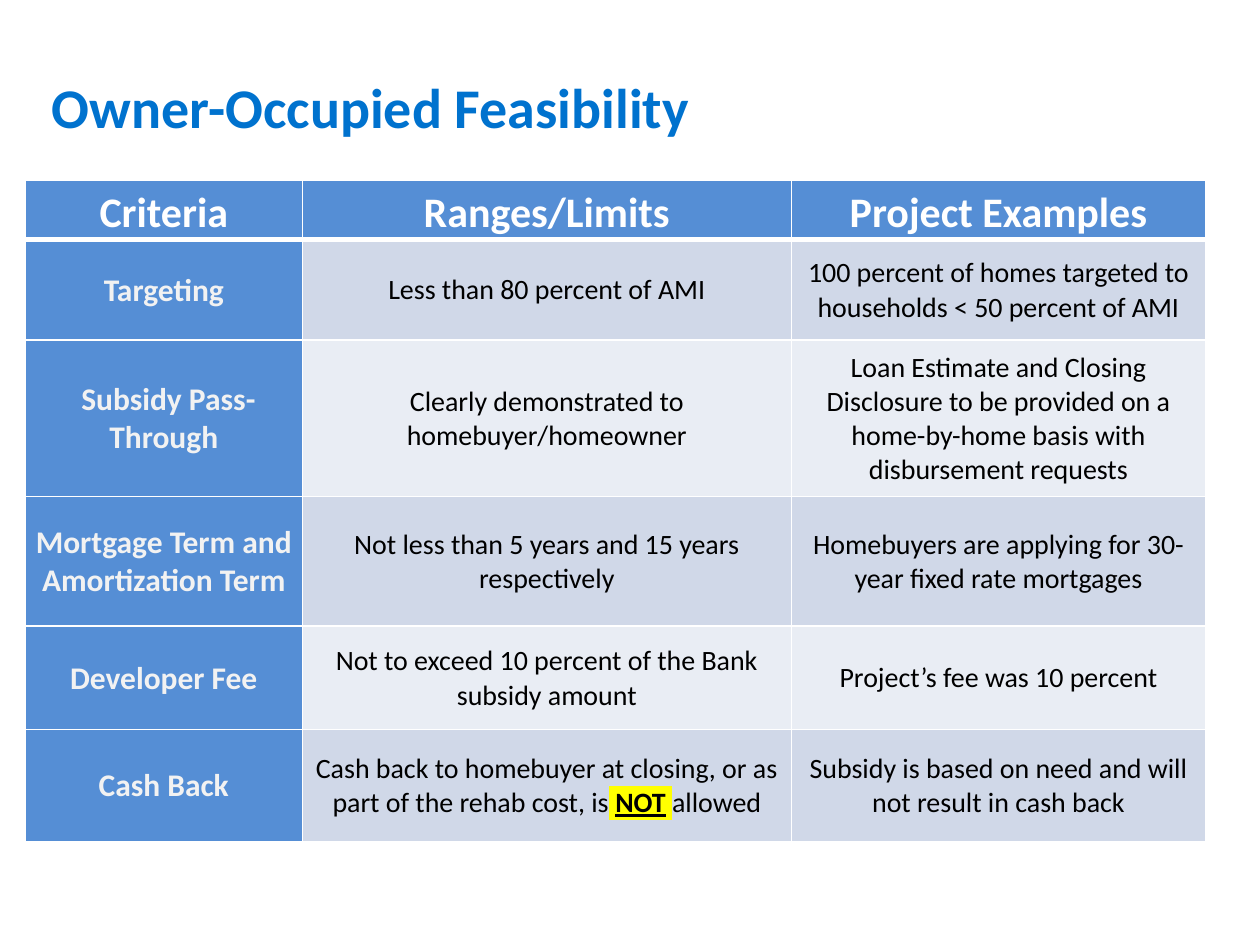
import pptx
import pptx.dml.color
import pptx.enum.text
import pptx.oxml
import pptx.oxml.ns
import pptx.util
from lxml import etree

RGB = pptx.dml.color.RGBColor
Inches = pptx.util.Inches
Pt = pptx.util.Pt
ALIGN = pptx.enum.text.PP_ALIGN
ANCHOR = pptx.enum.text.MSO_ANCHOR

WHITE = RGB(0xFF, 0xFF, 0xFF)
BLACK = RGB(0, 0, 0)
AZURE = RGB(0x00, 0x72, 0xCE)
BLUE = RGB(0x55, 0x8E, 0xD5)
PALE = RGB(0xF2, 0xF2, 0xF2)
BANDS = [RGB(0xD0, 0xD8, 0xE8), RGB(0xE9, 0xED, 0xF4)]
YELLOW = RGB(0xFF, 0xFF, 0x00)

WIDE, HIGH = 10, 7.5
COLS = [2.2, 3.88, 3.29]
ROWS = [0.47, 0.8, 1.24, 1.03, 0.82, 0.89]

TITLE = {"name": "Calibri", "size": Pt(32), "bold": True, "color": AZURE}
HEAD = {"name": "Calibri", "size": Pt(24), "bold": True, "color": WHITE}
LABEL = {**HEAD, "size": Pt(18), "color": PALE}
BODY = {"name": "Calibri", "size": Pt(16), "bold": False, "color": BLACK}
MARK = {**BODY, "mark": YELLOW}
STRONG = {**MARK, "bold": True, "underline": True}

CASH = [
    ("Cash back to homebuyer at closing, or as part of the rehab cost, is", BODY),
    (" ", MARK),
    ("NOT", STRONG),
    (" ", MARK),
    ("allowed", BODY),
]
DATA = [
    ["Criteria", "Ranges/Limits", "Project Examples"],
    ["Targeting", "Less than 80 percent of AMI",
     "100 percent of homes targeted to households < 50 percent of AMI"],
    [" Subsidy Pass-Through", "Clearly demonstrated to homebuyer/homeowner",
     "Loan Estimate and Closing Disclosure to be provided on a home-by-home "
     "basis with disbursement requests"],
    ["Mortgage Term and Amortization Term",
     "Not less than 5 years and 15 years respectively",
     "Homebuyers are applying for 30-year fixed rate mortgages"],
    ["Developer Fee", "Not to exceed 10 percent of the Bank subsidy amount",
     "Project’s fee was 10 percent"],
    ["Cash Back", CASH,
     "Subsidy is based on need and will not result in cash back"],
]


def node(owner, tag, **attrs):
    return etree.SubElement(owner, pptx.oxml.ns.qn(tag), attrs)


def add_run(para, text, form):
    run = para.add_run()
    run.text = text
    for key, value in form.items():
        if key == "color":
            run.font.color.rgb = value
        elif key != "mark":
            setattr(run.font, key, value)
    if "mark" in form:
        props = run.font._element
        mark = node(props, "a:highlight")
        node(mark, "a:srgbClr", val=str(form["mark"]))
        props.find(pptx.oxml.ns.qn("a:solidFill")).addnext(mark)


def add_edges(cell, base):
    props = cell._tc.get_or_add_tcPr()
    sides = {"a:lnL": 1, "a:lnR": 1, "a:lnT": 1, "a:lnB": base}
    for spot, (tag, size) in enumerate(sides.items()):
        line = node(props, tag, w=str(Pt(size)))
        node(node(line, "a:solidFill"), "a:srgbClr", val=str(WHITE))
        props.insert(spot, line)


def add_title(slide, text):
    title = slide.shapes.title
    place = {"left": 0.031 * WIDE, "top": 0.11 * HIGH,
             "width": 0.819 * WIDE, "height": 0.067 * HIGH}
    for key, value in place.items():
        setattr(title, key, Inches(value))
    frame = title.text_frame
    form = {"auto_size": pptx.enum.text.MSO_AUTO_SIZE.NONE, "word_wrap": True,
            "vertical_anchor": ANCHOR.BOTTOM, "margin_top": 0,
            "margin_bottom": Inches(0.22)}
    for key, value in form.items():
        setattr(frame, key, value)
    para = frame.paragraphs[0]
    para.alignment = ALIGN.LEFT
    add_run(para, text, TITLE)


def fill_cell(cell, value, row, col):
    style = HEAD if row == 0 else LABEL if col == 0 else BODY
    form = {"margin_left": Inches(0.01), "margin_top": Inches(0.01),
            "margin_right": Inches(0.01), "margin_bottom": 0,
            "vertical_anchor": ANCHOR.MIDDLE if row else ANCHOR.BOTTOM}
    for key, item in form.items():
        setattr(cell, key, item)
    cell.fill.solid()
    cell.fill.fore_color.rgb = BANDS[(row - 1) % 2] if style is BODY else BLUE
    para = cell.text_frame.paragraphs[0]
    para.alignment = ALIGN.CENTER
    runs = [(value, style)] if isinstance(value, str) else value
    for text, look in runs:
        add_run(para, text, look)
    add_edges(cell, 1 if row else 3)
    if row == 1:
        top = cell._tc.tcPr.find(pptx.oxml.ns.qn("a:lnT"))
        top.set("w", str(Pt(3)))


def add_grid(slide):
    frame = slide.shapes.add_table(
        len(ROWS), len(COLS), Inches(0.02 * WIDE), Inches(1.43),
        Inches(sum(COLS)), Inches(sum(ROWS)))
    table = frame.table
    for col, width in zip(table.columns, COLS):
        col.width = Inches(width)
    for row, height in zip(table.rows, ROWS):
        row.height = Inches(height)
    for row, line in enumerate(DATA):
        for col, value in enumerate(line):
            fill_cell(table.cell(row, col), value, row, col)


def main():
    deck = pptx.Presentation()
    deck.slide_width, deck.slide_height = Inches(WIDE), Inches(HIGH)
    slide = deck.slides.add_slide(deck.slide_layouts[5])
    add_title(slide, "Owner-Occupied Feasibility")
    add_grid(slide)
    deck.save("out.pptx")


if __name__ == "__main__":
    main()
